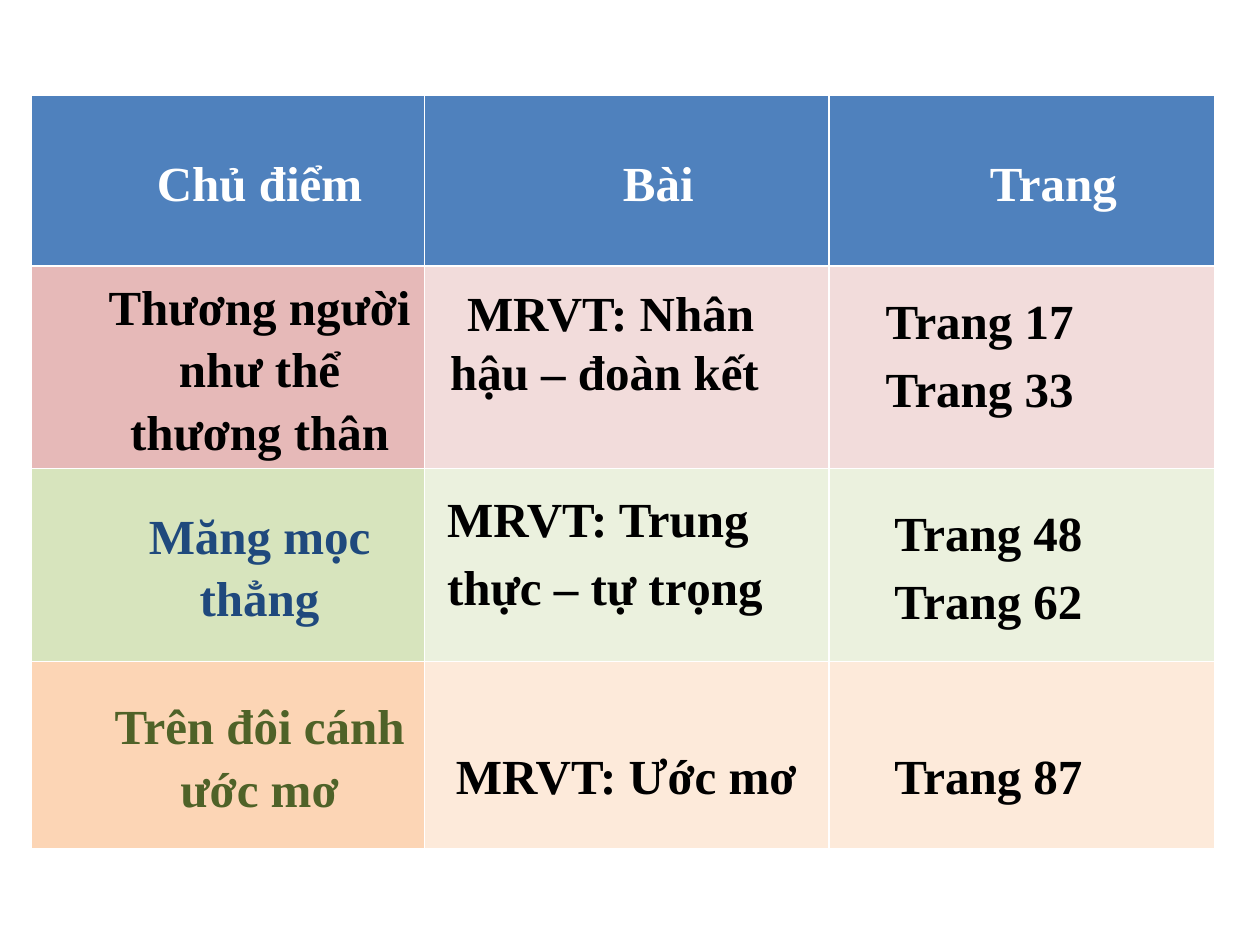
from pptx import Presentation
from pptx.dml.color import RGBColor
from pptx.enum.text import MSO_ANCHOR, MSO_AUTO_SIZE, PP_ALIGN
from pptx.util import Inches, Pt

CENTER, LEFT = PP_ALIGN.CENTER, PP_ALIGN.LEFT
MIDDLE = MSO_ANCHOR.MIDDLE
GROW = MSO_AUTO_SIZE.SHAPE_TO_FIT_TEXT
BLANK_LAYOUT = 6

THEME = {
    "font": "Times New Roman",
    "size": Pt(28),
    "line_spacing": 1.15,
    "indent": Inches(0.5),
    "white": "FFFFFF",
    "black": "000000",
    "header": "4F81BD",
}

TABLE_LEFT, TABLE_TOP = 0.25, 0.76
COLUMN_WIDTHS = [3.12, 3.21, 3.06]
ROW_HEIGHTS = [1.35, 1.61, 1.53, 1.49]
HEADINGS = ["Chủ điểm", "Bài", "Trang"]

# topic, text colour, topic fill, fill of the other columns
TOPICS = [
    ("Thương người như thể thương thân", THEME["black"], "E6B9B8", "F2DCDB"),
    ("Măng mọc thẳng", "1F497D", "D7E4BD", "EBF1DE"),
    ("Trên đôi cánh ước mơ", "4F6228", "FCD5B5", "FDEADA"),
]

# Each entry sits over a table cell: row, column, offset from that cell's
# corner, width, height, wrap, lines
ENTRIES = [
    (1, 1, -0.10, 0.08, 3.15, 1.35, True, ["MRVT: Nhân hậu – đoàn kết "]),
    (1, 2, -0.15, 0.08, 3.15, 1.49, True, ["Trang 17", "Trang 33"]),
    (2, 1, -0.42, 0.04, 3.48, 1.49, True, ["MRVT: Trung thực – tự trọng"]),
    (2, 2, -0.08, 0.15, 2.22, 1.14, False, ["Trang 48", "Trang 62"]),
    (3, 1, -0.35, 0.55, 3.48, 0.95, True, ["MRVT: Ước mơ"]),
    (3, 2, -0.08, 0.55, 2.69, 0.95, True, ["Trang 87"]),
]


def write_lines(text_frame, lines, color, alignment, indented=True):
    text_frame.text = "\n".join(lines)
    for paragraph in text_frame.paragraphs:
        paragraph.alignment = alignment
        if indented:
            paragraph.line_spacing = THEME["line_spacing"]
            paragraph._p.get_or_add_pPr().set("marL", str(THEME["indent"]))
        for run in paragraph.runs:
            run.font.name = THEME["font"]
            run.font.size = THEME["size"]
            run.font.bold = True
            run.font.color.rgb = RGBColor.from_string(color)


def fill_cell(cell, color):
    cell.fill.solid()
    cell.fill.fore_color.rgb = RGBColor.from_string(color)
    cell.vertical_anchor = MIDDLE
    cell.margin_left = cell.margin_right = Inches(0.04)
    cell.margin_top = cell.margin_bottom = 0


presentation = Presentation()
presentation.slide_width, presentation.slide_height = Inches(10), Inches(7.5)
slide = presentation.slides.add_slide(presentation.slide_layouts[BLANK_LAYOUT])

table = slide.shapes.add_table(
    len(ROW_HEIGHTS), len(COLUMN_WIDTHS), Inches(TABLE_LEFT), Inches(TABLE_TOP),
    Inches(sum(COLUMN_WIDTHS)), Inches(sum(ROW_HEIGHTS))).table
for column, width in zip(table.columns, COLUMN_WIDTHS):
    column.width = Inches(width)
for row, height in zip(table.rows, ROW_HEIGHTS):
    row.height = Inches(height)

for column_index, heading in enumerate(HEADINGS):
    cell = table.cell(0, column_index)
    fill_cell(cell, THEME["header"])
    write_lines(cell.text_frame, [heading], THEME["white"], CENTER)

for row_index, (topic, color, topic_fill, row_fill) in enumerate(TOPICS, start=1):
    for column_index in range(len(HEADINGS)):
        fill_cell(table.cell(row_index, column_index),
                  row_fill if column_index else topic_fill)
    write_lines(table.cell(row_index, 0).text_frame, [topic], color, CENTER)

for row_index, column_index, dx, dy, width, height, wrap, lines in ENTRIES:
    left = TABLE_LEFT + sum(COLUMN_WIDTHS[:column_index]) + dx
    top = TABLE_TOP + sum(ROW_HEIGHTS[:row_index]) + dy
    text_box = slide.shapes.add_textbox(
        Inches(left), Inches(top), Inches(width), Inches(height))
    text_box.text_frame.word_wrap = wrap
    text_box.text_frame.auto_size = GROW
    centered = (row_index, column_index) == (1, 1)
    write_lines(text_box.text_frame, lines, THEME["black"],
                CENTER if centered else LEFT, indented=not centered)

presentation.save("out.pptx")
